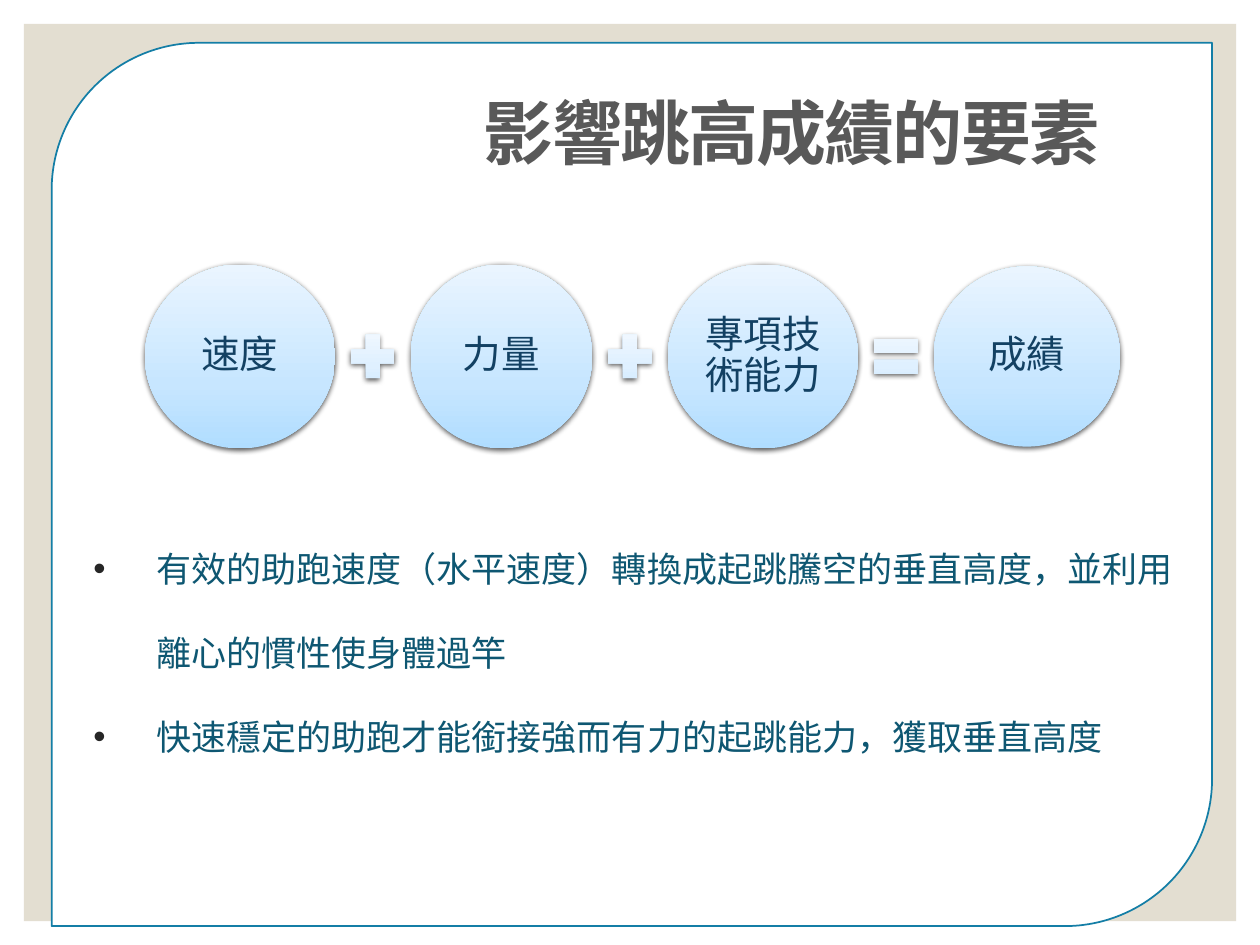
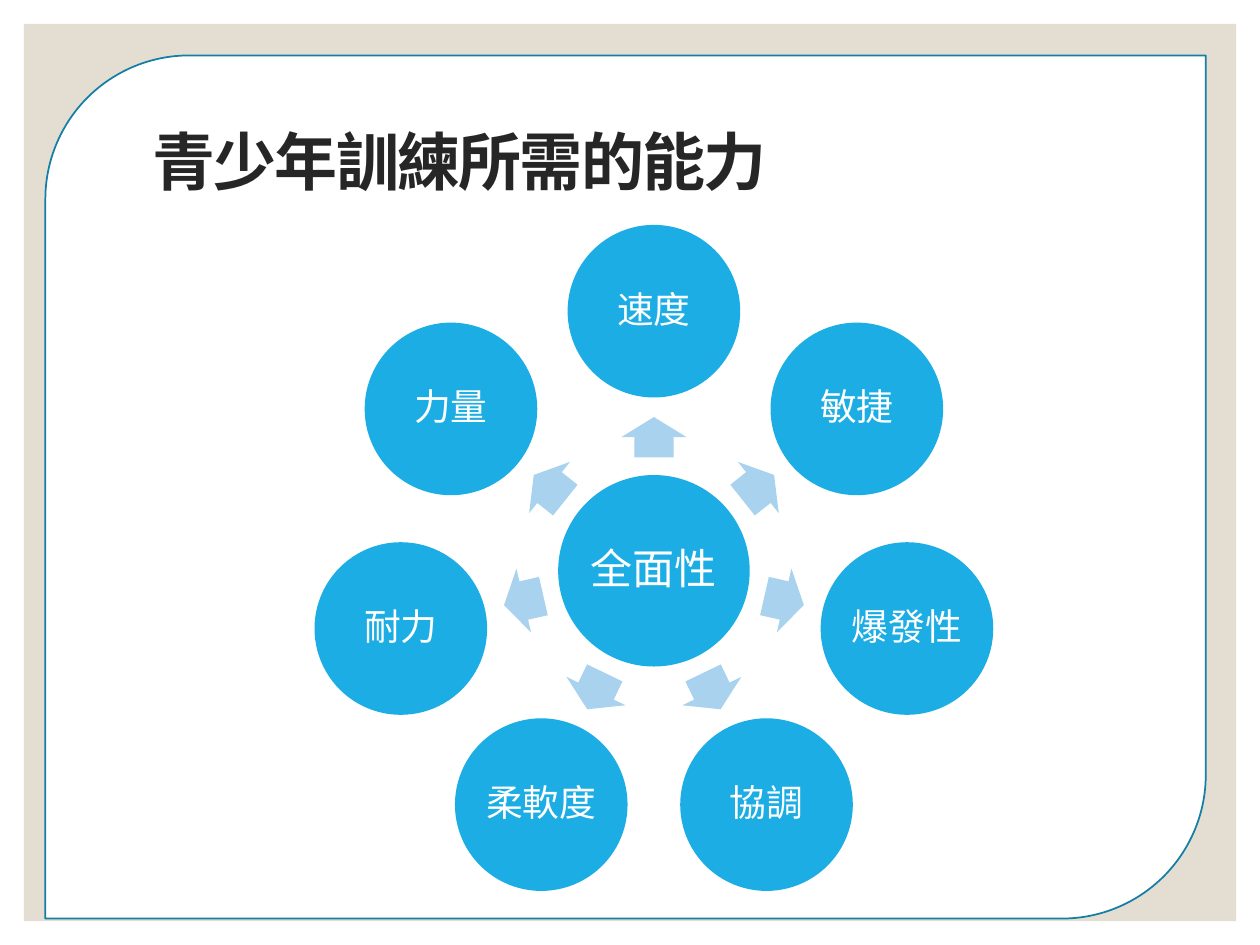
from copy import deepcopy
from math import cos, radians, sin

from lxml.etree import SubElement as Sub
from pptx import Presentation
from pptx.dml.color import RGBColor
from pptx.enum.shapes import MSO_SHAPE as Kind
from pptx.enum.text import MSO_ANCHOR as Anchor, MSO_AUTO_SIZE as Fit, PP_ALIGN as Align
from pptx.oxml.ns import qn
from pptx.util import Inches, Pt

SAND, WHITE, EDGE = "E3DED1", "FFFFFF", "147EA6"
INK, GREY, NAVY, TEAL = "262626", "595959", "134163", "0E5772"
SKY, PALE = "1CADE4", "A9D2EF"
BALL = [(0, "B0DDFF"), (0.35, "C7E6FF"), (1, "EAF5FF")]
SIGN = [(0, "D3EBFF"), (0.35, "DFF0FF"), (1, "F3F9FF")]
SANS, TRAD, LATIN = "Noto Sans CJK SC", "Noto Sans CJK TC", "Calibri"


def rgb(code):
    return RGBColor.from_string(code)


class Deck:
    def __init__(self):
        self.prs = Presentation()
        self.prs.slide_width, self.prs.slide_height = Inches(10), Inches(7.5)
        self.slide = None

    def start(self, text, box, size, color, frame):
        """Add a slide with its band, rounded frame and title."""
        self.slide = self.prs.slides.add_slide(self.prs.slide_layouts[5])
        self.shape(Kind.RECTANGLE, (0.19, 0.19, 9.62, 7.12), SAND)
        panel = self.shape(Kind.ROUND_2_DIAG_RECTANGLE, frame, WHITE)
        panel.line.color.rgb = rgb(EDGE)
        panel.line.width = Pt(1)
        title = self.slide.shapes.title
        self.slide.shapes._spTree.append(title._element)
        title.left, title.top, title.width, title.height = map(Inches, box)
        self.fill_text(title.text_frame, [text], size, color, SANS, spacing=0.83, inset=0.05)
        para = title.text_frame.paragraphs[0]
        para.font.bold = True
        para._p.pPr.find(qn("a:defRPr")).set("spc", "-100")

    def shape(self, kind, box, fill):
        item = self.slide.shapes.add_shape(kind, *map(Inches, box))
        item.shadow.inherit = False
        item.line.fill.background()
        item.fill.solid()
        item.fill.fore_color.rgb = rgb(fill)
        return item

    def glossy(self, kind, box, stops):
        """Add a shape with an upward gradient and a soft shadow."""
        item = self.shape(kind, box, WHITE)
        item.fill.gradient()
        item.fill.gradient_angle = 90
        props = item._element.spPr
        ramp = props.find(".//" + qn("a:gsLst"))
        ramp.insert(1, deepcopy(ramp[0]))
        for stop, (pos, color) in zip(item.fill.gradient_stops, stops):
            stop.position = pos
            stop.color.rgb = rgb(color)
        shade = Sub(props.find(qn("a:effectLst")), qn("a:outerShdw"),
                    blurRad=str(Pt(3)), dist=str(Pt(1)), dir="5400000", rotWithShape="0")
        black = Sub(shade, qn("a:srgbClr"), val="000000")
        Sub(black, qn("a:alpha"), val="63000")
        return item

    def disc(self, mid, size, text, points):
        x, y = mid
        item = self.shape(Kind.OVAL, (x - size / 2, y - size / 2, size, size), SKY)
        self.label(item, text, points, WHITE, TRAD)

    def label(self, item, text, size, color, font):
        self.fill_text(item.text_frame, [text], size, color, font, align=Align.CENTER)

    def bullets(self, box, lines):
        frame = self.slide.shapes.add_textbox(*map(Inches, box)).text_frame
        self.fill_text(frame, lines, 20, TEAL, SANS, spacing=2, inset=0.05,
                       anchor=Anchor.TOP, dots=True)

    def fill_text(self, frame, lines, size, color, font, align=Align.LEFT,
                  spacing=0.9, inset=0, anchor=Anchor.MIDDLE, dots=False):
        frame.word_wrap = True
        frame.auto_size = Fit.NONE
        frame.vertical_anchor = anchor
        frame.margin_left = frame.margin_right = Inches(inset)
        frame.margin_top = frame.margin_bottom = Inches(inset)
        for i, line in enumerate(lines):
            para = frame.add_paragraph() if i else frame.paragraphs[0]
            para.text = line
            para.alignment = align
            para.line_spacing = spacing
            if dots:
                self.dot(para)
            para.font.size = Pt(size)
            para.font.color.rgb = rgb(color)
            para.font.name = font
            Sub(para._p.pPr.find(qn("a:defRPr")), qn("a:ea"),
                typeface=TRAD if font == LATIN else font)

    def dot(self, para):
        props = para._p.get_or_add_pPr()
        props.set("marL", str(Inches(0.5)))
        props.set("indent", str(Inches(-0.5)))
        Sub(Sub(props, qn("a:buClr")), qn("a:srgbClr"), val=INK)
        Sub(props, qn("a:buFont"), typeface="Arial")
        Sub(props, qn("a:buChar"), char="•")


def factors(deck):
    deck.start("影響跳高成績的要素", (3.79, 0.77, 5.33, 0.66), 40, GREY,
               (0.41, 0.34, 9.21, 7.01))
    plus, equal = Kind.MATH_PLUS, Kind.MATH_EQUAL
    row = [("速度", 1.51, 1.46), (plus, 0.47, 0.47), ("力量", 1.44, 1.46),
           (plus, 0.47, 0.47), ("專項技術能力", 1.51, 1.46), (equal, 0.47, 0.47),
           ("成績", 1.48, 1.43)]
    left, right, mid = 1.15, 8.89, 2.83
    gap = (right - left - sum(w for _, w, _ in row)) / (len(row) - 1)
    for part, wide, high in row:
        box = (left, mid - high / 2, wide, high)
        if isinstance(part, str):
            deck.label(deck.glossy(Kind.OVAL, box, BALL), part, 22, NAVY, LATIN)
        else:
            deck.glossy(part, box, SIGN)
        left += wide + gap
    deck.bullets((0.69, 3.96, 8.78, 2.46), [
        "有效的助跑速度（水平速度）轉換成起跳騰空的垂直高度，並利用離心的慣性使身體過竿",
        "快速穩定的助跑才能銜接強而有力的起跳能力，獲取垂直高度"])


def skills(deck):
    deck.start("青少年訓練所需的能力", (1.16, 0.93, 8.4, 0.79), 36, INK,
               (0.36, 0.44, 9.21, 6.85))
    hub = (5.19, 4.53)
    deck.disc(hub, 1.52, "全面性", 24)
    names = ["速度", "敏捷", "爆發性", "協調", "柔軟度", "耐力", "力量"]
    wide, high = 0.32, 0.52
    for i, name in enumerate(names):
        turn = i * 360 / len(names) - 90

        def spot(far):
            return hub[0] + far * cos(radians(turn)), hub[1] + far * sin(radians(turn))

        x, y = spot(1.06)
        arrow = deck.shape(Kind.RIGHT_ARROW, (x - wide / 2, y - high / 2, wide, high), PALE)
        arrow.adjustments[0], arrow.adjustments[1] = 0.6, 0.5
        arrow.rotation = turn % 360
        deck.disc(spot(2.06), 1.37, name, 21)


def main():
    deck = Deck()
    factors(deck)
    skills(deck)
    deck.prs.save("out.pptx")


if __name__ == "__main__":
    main()
